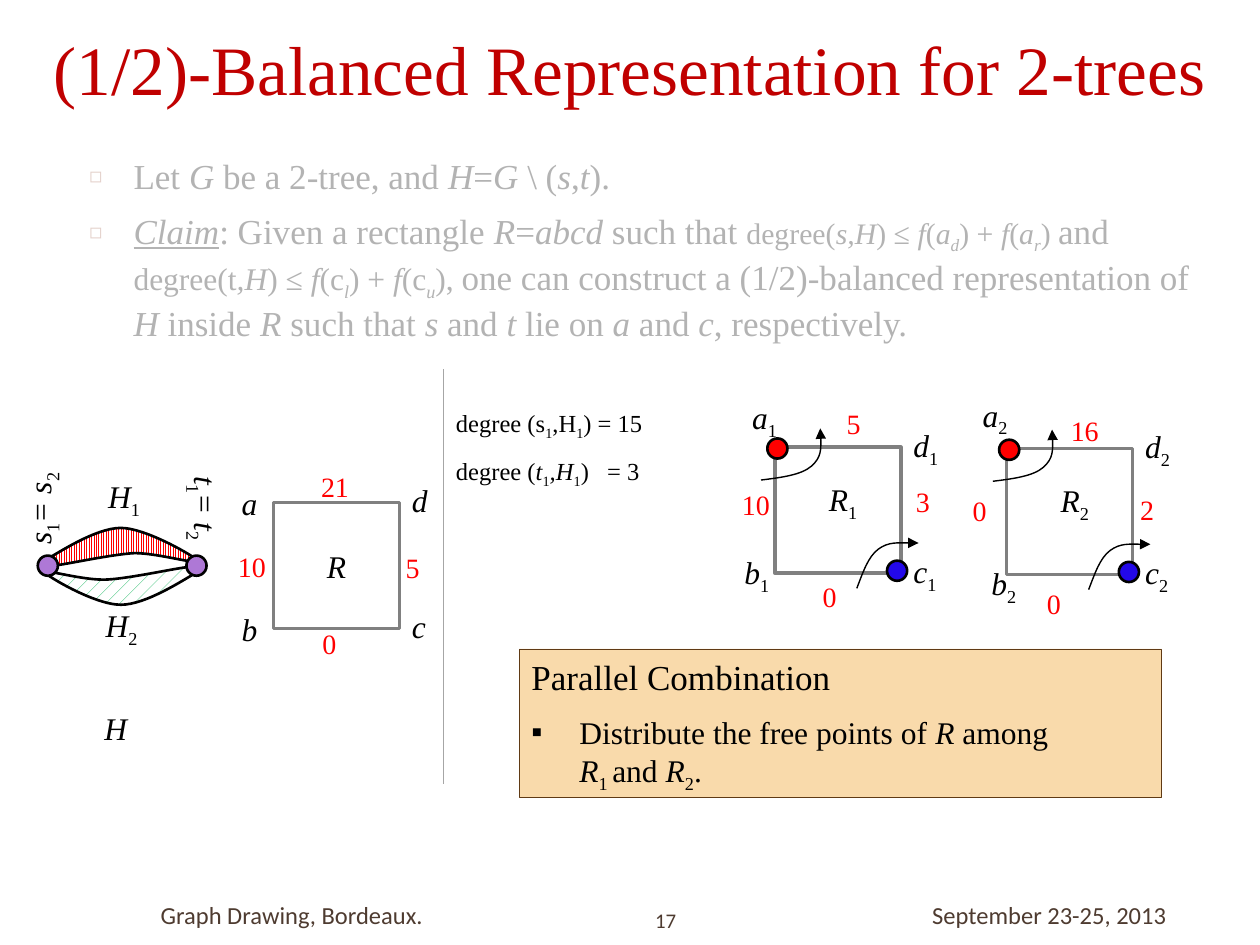
from dataclasses import dataclass

from lxml.etree import SubElement
from pptx import Presentation
from pptx.dml.color import RGBColor
from pptx.enum.dml import MSO_PATTERN as PATTERN
from pptx.enum.shapes import MSO_CONNECTOR as CONN, MSO_SHAPE as SHAPE
from pptx.enum.text import MSO_ANCHOR as ANCHOR, MSO_AUTO_SIZE as AUTO, PP_ALIGN as ALIGN
from pptx.oxml.ns import qn
from pptx.util import Pt

PX = 9144  # EMU per px, 100 px to the inch


@dataclass(frozen=True)
class Theme:
    serif: str = "Times New Roman"
    sans: str = "Calibri"
    ink: str = "000000"
    paper: str = "FFFFFF"
    title: str = "C00000"
    footer: str = "4E3B30"
    bullet: str = "A5644E"
    red: str = "FF0000"
    blue: str = "2308E8"
    green: str = "00B050"
    purple: str = "AE78D6"
    gray: str = "808080"
    rule: str = "A6A6A6"
    panel: str = "F9DAAB"
    panel_edge: str = "603A14"
    title_size: float = 39.6
    body_size: float = 20
    label_size: float = 18
    value_size: float = 16
    note_size: float = 14
    number_size: float = 11.9


T = Theme()


def px(*values):
    return [round(v * PX) for v in values]


def rgb(color):
    return RGBColor.from_string(color)


# Text: * toggles italic, _ subscript, ~ underline
def add_runs(p, markup, size, color=T.ink, name=T.serif):
    on = {"*": False, "_": False, "~": False}
    pieces = [["", dict(on)]]
    for ch in markup:
        if ch in on:
            on[ch] = not on[ch]
            pieces.append(["", dict(on)])
        else:
            pieces[-1][0] += ch
    for text, style in pieces:
        if not text:
            continue
        r = p.add_run()
        r.text = text
        r.font.size, r.font.name = Pt(size), name
        r.font.color.rgb = rgb(color)
        r.font.italic, r.font.underline = style["*"], style["~"]
        if style["_"]:
            r.font._element.set("baseline", "-25000")


def set_indent(p, left, hanging=0, bullet=None, color=T.ink, percent=100, font=None):
    pPr = p._p.get_or_add_pPr()
    pPr.set("marL", str(left * PX))
    pPr.set("indent", str(-hanging * PX))
    if bullet:
        SubElement(SubElement(pPr, qn("a:buClr")), qn("a:srgbClr"), val=color)
        SubElement(pPr, qn("a:buSzPct"), val=str(percent * 1000))
        if font:
            SubElement(pPr, qn("a:buFont"), typeface=font)
        SubElement(pPr, qn("a:buChar"), char=bullet)


def add_text(slide, markup, x, y, w, h=40, size=T.label_size, color=T.ink,
             name=T.serif, rotation=0, align=ALIGN.LEFT, middle=False, tab=None):
    s = slide.shapes.add_textbox(*px(x, y, w, h))
    s.rotation = rotation
    tf = s.text_frame
    tf.word_wrap = middle
    tf.auto_size = AUTO.NONE if middle else AUTO.SHAPE_TO_FIT_TEXT
    tf.vertical_anchor = ANCHOR.MIDDLE if middle else ANCHOR.TOP
    p = tf.paragraphs[0]
    p.alignment = align
    if tab:
        tabs = SubElement(p._p.get_or_add_pPr(), qn("a:tabLst"))
        SubElement(tabs, qn("a:tab"), pos=str(tab * PX), algn="l")
    add_runs(p, markup, size, color, name)


def add_value(slide, value, x, y):
    add_text(slide, value, x, y, 31 if len(value) == 1 else 43, 37, T.value_size, T.red)


# Shapes
def add_box(slide, kind, x, y, w, h, fill=None, line=None, width=1.0):
    s = slide.shapes.add_shape(kind, *px(x, y, w, h))
    s.shadow.inherit = False
    if fill:
        s.fill.solid()
        s.fill.fore_color.rgb = rgb(fill)
    else:
        s.fill.background()
    if line:
        s.line.color.rgb, s.line.width = rgb(line), Pt(width)
    else:
        s.line.fill.background()
    return s


def add_dot(slide, x, y, color):
    add_box(slide, SHAPE.OVAL, x, y, 16, 16, color, T.ink, 1.5)


def add_curve(slide, box, start, curves, width, closed=False):
    """Outline of cubic curves; box is the frame (x, y, w, h) they fill."""
    x, y, w, h = box
    builder = slide.shapes.build_freeform(*px(x, y))
    builder.add_line_segments([px(x + w, y + h)], close=False)
    s = builder.convert_to_shape()
    outline = s._element.find(".//" + qn("a:path"))
    for child in list(outline):
        outline.remove(child)
    segments = [("a:moveTo", [start])] + [("a:cubicBezTo", c) for c in curves]
    for tag, points in segments:
        segment = SubElement(outline, qn(tag))
        for left, top in points:
            dx, dy = px(left - x, top - y)
            SubElement(segment, qn("a:pt"), x=str(dx), y=str(dy))
    if closed:
        SubElement(outline, qn("a:close"))
    s.shadow.inherit = False
    s.fill.background()
    s.line.color.rgb, s.line.width = rgb(T.ink), Pt(width)
    return s


def add_lens(slide, box, start, curves, pattern, color):
    s = add_curve(slide, box, start, curves, 1.5, closed=True)
    s.fill.patterned()
    s.fill.pattern = pattern
    s.fill.fore_color.rgb, s.fill.back_color.rgb = rgb(color), rgb(T.paper)


def add_arrow(slide, x, y, box, start, curves):
    def move(point):
        return point[0] + x, point[1] + y

    s = add_curve(slide, (*move(box), *box[2:]), move(start),
                  [[move(q) for q in c] for c in curves], 0.79)
    SubElement(s.line._get_or_add_ln(), qn("a:tailEnd"), type="triangle")


def add_square(slide, x, y, sub, a, b, values):
    """Square with its corner names and the free points along its sides."""
    s = add_box(slide, SHAPE.RECTANGLE, x, y, 100, 100, None, T.gray, 2)
    if sub:
        add_text(slide, f"*R*_{sub}_", x + 33, y + 21, 44)
    else:
        p = s.text_frame.paragraphs[0]
        p.alignment = ALIGN.CENTER
        add_runs(p, "*R*", T.label_size)
    width = 41 if sub else 33
    for name, (dx, dy) in zip("abcd", (a, b, (100, 78), (100, -22))):
        add_text(slide, f"*{name}*_{sub}_", x + dx, y + dy, width)
    for value, dx, dy in values:
        add_value(slide, value, x + dx, y + dy)
    if sub:
        add_dot(slide, x - 6, y - 7, T.red)
        add_dot(slide, x + 89, y + 90, T.blue)
        add_arrow(slide, x, y, (-11, -15, 47, 41), (-11, 26),
                  [((5, 24), (21, 22), (29, 15)), ((37, 8), (37, -3), (36, -15))])
        add_arrow(slide, x, y, (65, 76, 49, 36), (65, 112),
                  [((70, 99), (74, 87), (82, 81)), ((90, 75), (102, 76), (114, 76))])


# Slide parts
def place(s, *box):
    s.left, s.top, s.width, s.height = px(*box)
    s.text_frame.auto_size = AUTO.NONE
    return s.text_frame


def fill_placeholders(slide):
    tf = place(slide.shapes.title, 0, 0, 1000, 108)
    tf.vertical_anchor = ANCHOR.MIDDLE
    p = tf.paragraphs[0]
    p.alignment = ALIGN.CENTER
    add_runs(p, "(1/2)-Balanced Representation for 2-trees", T.title_size, T.title)

    tf = place(slide.placeholders[1], 61, 118, 900, 616)
    items = [
        [(r"Let *G *be a 2-tree, and *H*=*G* \ (*s*,*t*).", T.body_size)],
        [("~*Claim*~: Given a rectangle *R*=*abcd* such that ", T.body_size),
         ("degree(*s,H*) ≤ *f*(*a_d_*) + *f*(*a_r_*) ", 17),
         ("and ", T.body_size),
         ("degree(t*,H*) ≤ *f*(c*_l_*) + *f*(c*_u_*), ", 18),
         ("one can construct a (1/2)-balanced representation of *H* inside *R* "
          "such that *s* and *t* lie on *a* and *c*, respectively.", T.body_size)],
    ]
    for i, parts in enumerate(items):
        p = tf.add_paragraph() if i else tf.paragraphs[0]
        set_indent(p, 35, 35, "◻", T.bullet, 60)
        p.space_before = Pt(7)
        for markup, size in parts:
            add_runs(p, markup, size)

    # Veil that fades the claim
    veil = add_box(slide, SHAPE.RECTANGLE, 26, 100, 934, 184, T.paper)
    color = veil.fill._xPr.find(qn("a:solidFill"))[0]
    SubElement(color, qn("a:alpha"), val="70000")


def draw_graph(slide):
    add_lens(slide, (31, 419, 126, 30), (37, 444),
             [((46, 439), (76, 419), (96, 419)), ((116, 419), (155, 442), (157, 445)),
              ((159, 449), (126, 439), (107, 439)), ((88, 440), (53, 448), (42, 449)),
              ((30, 450), (28, 449), (37, 444))], PATTERN.LIGHT_VERTICAL, T.red)
    add_lens(slide, (35, 450, 126, 30), (155, 455),
             [((146, 460), (116, 480), (96, 480)), ((75, 480), (37, 457), (35, 454)),
              ((33, 451), (66, 461), (85, 460)), ((104, 459), (139, 451), (150, 450)),
              ((162, 449), (164, 450), (155, 455))], PATTERN.PERCENT_10, T.green)
    for x in (30, 148):
        add_dot(slide, x, 441, T.purple)
    add_text(slide, "*s*_1_*= s*_2_", -9, 382, 80, rotation=270)
    add_text(slide, "*t*_1_*= t*_2_", 127, 385, 74, rotation=90)
    add_text(slide, "*H*_1_", 76, 374, 47)
    add_text(slide, "*H*_2_", 74, 476, 47)
    add_text(slide, "*H*", 73, 558, 38)


def draw_panel(slide):
    s = add_box(slide, SHAPE.RECTANGLE, 412, 515, 510, 118, T.panel, T.panel_edge, 0.25)
    tf = s.text_frame
    tf.word_wrap, tf.vertical_anchor = True, ANCHOR.TOP
    lines = [("Parallel Combination", T.body_size),
             ("Distribute the free points of *R* among", T.label_size),
             ("*R*_1 _and *R*_2_.", T.label_size)]
    for i, (markup, size) in enumerate(lines):
        p = tf.add_paragraph() if i else tf.paragraphs[0]
        p.alignment = ALIGN.LEFT
        if i == 0:
            p.space_after = Pt(9)
        elif i == 1:
            set_indent(p, 38, 38, "▪", font=T.serif)
        else:
            set_indent(p, 38)
        add_runs(p, markup, size)


def draw_footer(slide):
    for text, x, y, w, h, size, align in [
            ("Graph Drawing, Bordeaux. ", 67, 706, 283, 40, T.note_size, ALIGN.RIGHT),
            ("17", 510, 717, 58, 27, T.number_size, ALIGN.LEFT),
            ("September 23-25, 2013", 730, 706, 228, 40, T.note_size, ALIGN.LEFT)]:
        add_text(slide, text, x, y, w, h, size, T.footer, T.sans, align=align, middle=True)


def main():
    prs = Presentation()
    prs.slide_width, prs.slide_height = px(1000, 750)
    slide = prs.slides.add_slide(prs.slide_layouts[1])
    fill_placeholders(slide)
    draw_graph(slide)

    # Divider
    rule = slide.shapes.add_connector(CONN.STRAIGHT, *px(352, 293, 352, 622))
    rule.line.color.rgb, rule.line.width = rgb(T.rule), Pt(0.79)
    SubElement(rule._element.spPr, qn("a:effectLst"))

    # Rectangles R, R1 and R2
    add_square(slide, 217, 399, "", (-35, -20), (-35, 80),
               [("10", -38, 32), ("21", 28, -31), ("5", 95, 33), ("0", 29, 93)])
    add_square(slide, 615, 355, "1", (-28, -44), (-34, 79),
               [("10", -36, 27), ("5", 47, -37), ("3", 102, 25), ("0", 28, 100)])
    add_square(slide, 799, 356, "2", (-29, -47), (-22, 87),
               [("0", -37, 31), ("16", 41, -33), ("2", 96, 30), ("0", 22, 105)])

    # Degrees
    add_text(slide, "degree (s_1_,H_1_) = 15", 352, 319, 171, 34, T.note_size)
    add_text(slide, "degree (*t*_1_*,H*_1_)\t= 3", 352, 357, 169, 34, T.note_size, tab=120)

    draw_panel(slide)
    draw_footer(slide)
    prs.save("out.pptx")


if __name__ == "__main__":
    main()
